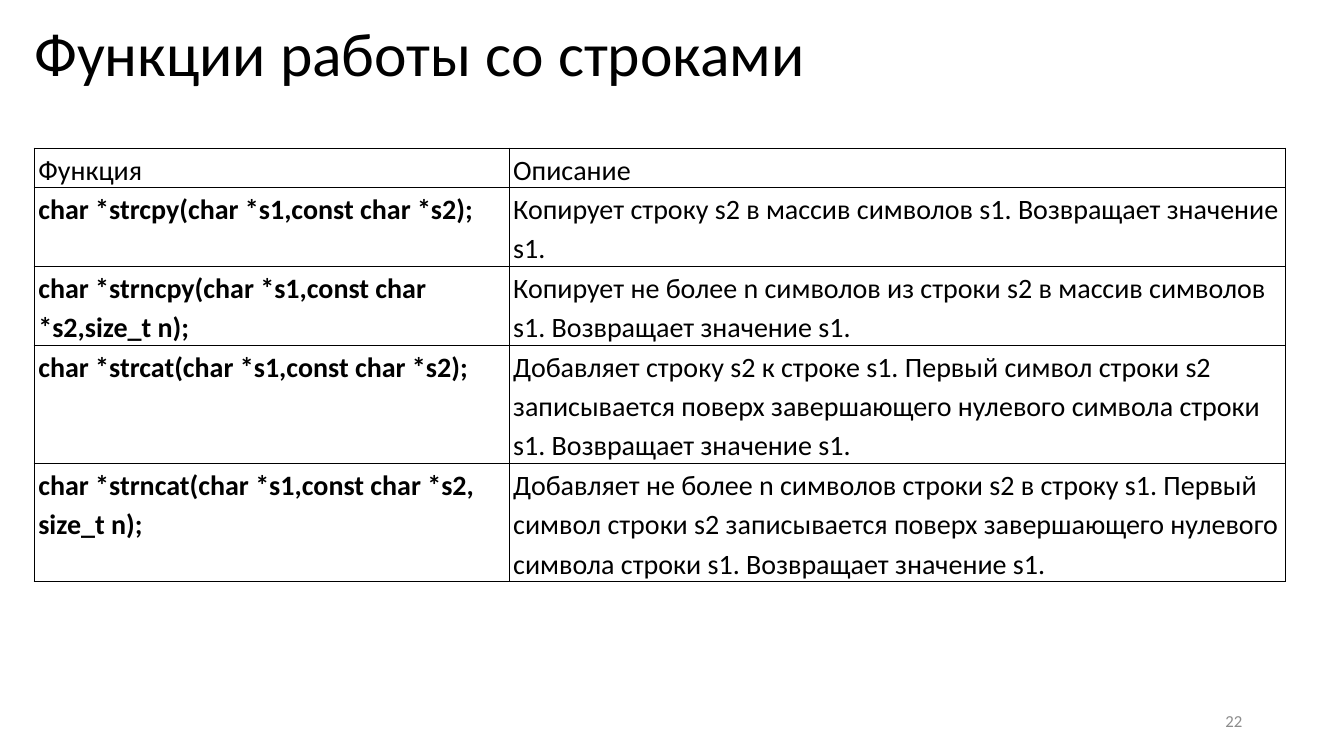
"""Build a slide with a bordered table of C string functions."""
from lxml import etree
from pptx import Presentation
from pptx import util as u
from pptx.dml.color import RGBColor
from pptx.enum import text as t
from pptx.oxml.ns import qn

TITLE = "Функции работы со строками"
PAGE = "22"
HEAD = ("Функция", "Описание")
ROWS = [
    ("сhar *strcpy(char *s1,const char *s2);",
     "Копирует строку s2 в массив символов s1. Возвращает значение s1."),
    ("сhar *strncpy(char *s1,const char *s2,size_t n);",
     "Копирует не более n символов из строки s2 в массив символов s1. "
     "Возвращает значение s1."),
    ("сhar *strcat(char *s1,const char *s2);",
     "Добавляет строку s2 к строке s1. Первый символ строки s2 записывается "
     "поверх завершающего нулевого символа строки s1. Возвращает значение s1."),
    ("сhar *strncat(char *s1,const char *s2, size_t n);",
     "Добавляет не более n символов строки s2 в строку s1. Первый символ "
     "строки s2 записывается поверх завершающего нулевого символа строки s1. "
     "Возвращает значение s1."),
]
LINES = (1, 2, 2, 3, 3)
WIDTHS = (4.71, 7.7)
STEP = 0.38
THEME = {"font": "Calibri", "ink": "000000", "gray": "8C8C8C",
         "title": 44, "body": 20, "page": 12, "rule": 1}


def write(frame, words, size="body", color="ink", bold=False,
          align=t.PP_ALIGN.LEFT, lead=None, after=None):
    frame.word_wrap = True
    para = frame.paragraphs[0]
    para.alignment = align
    if lead:
        para.line_spacing = lead
    if after:
        para.space_after = u.Pt(after)
    run = para.add_run()
    run.text = words
    font = run.font
    font.name, font.size, font.bold = THEME["font"], u.Pt(THEME[size]), bold
    font.color.rgb = RGBColor.from_string(THEME[color])


def label(slide, box, words, anchor, **style):
    frame = slide.shapes.add_textbox(*map(u.Inches, box)).text_frame
    frame.vertical_anchor = anchor
    write(frame, words, **style)


def border(cell):
    props = cell._tc.get_or_add_tcPr()
    for spot, side in enumerate(("lnL", "lnR", "lnT", "lnB")):
        line = etree.Element(qn(f"a:{side}"), w=str(u.Pt(THEME["rule"])))
        fill = etree.SubElement(line, qn("a:solidFill"))
        etree.SubElement(fill, qn("a:srgbClr"), val=THEME["ink"])
        props.insert(spot, line)


def grid(slide):
    data = [HEAD] + ROWS
    box = (0.34, 1.47, sum(WIDTHS), STEP * sum(LINES))
    table = slide.shapes.add_table(
        len(data), len(HEAD), *map(u.Inches, box)).table
    table.first_row = table.horz_banding = False
    for col, width in zip(table.columns, WIDTHS):
        col.width = u.Inches(width)
    for row, count, texts in zip(table.rows, LINES, data):
        row.height = u.Inches(STEP * count)
        for col, (cell, words) in enumerate(zip(row.cells, texts)):
            cell.margin_left = cell.margin_right = u.Inches(0.04)
            cell.margin_top = cell.margin_bottom = 0
            cell.fill.background()
            border(cell)
            write(cell.text_frame, words, lead=1.15, after=10,
                  bold=col == 0 and texts is not HEAD)


def main():
    deck = Presentation()
    deck.slide_width, deck.slide_height = u.Inches(13.33), u.Inches(7.5)
    slide = deck.slides.add_slide(deck.slide_layouts[6])
    grid(slide)
    label(slide, (0.24, 0.1, 12.52, 1.25), TITLE, t.MSO_ANCHOR.TOP,
          size="title")
    label(slide, (9.42, 6.95, 3, 0.4), PAGE, t.MSO_ANCHOR.MIDDLE,
          size="page", color="gray", align=t.PP_ALIGN.RIGHT)
    deck.save("out.pptx")


if __name__ == "__main__":
    main()
